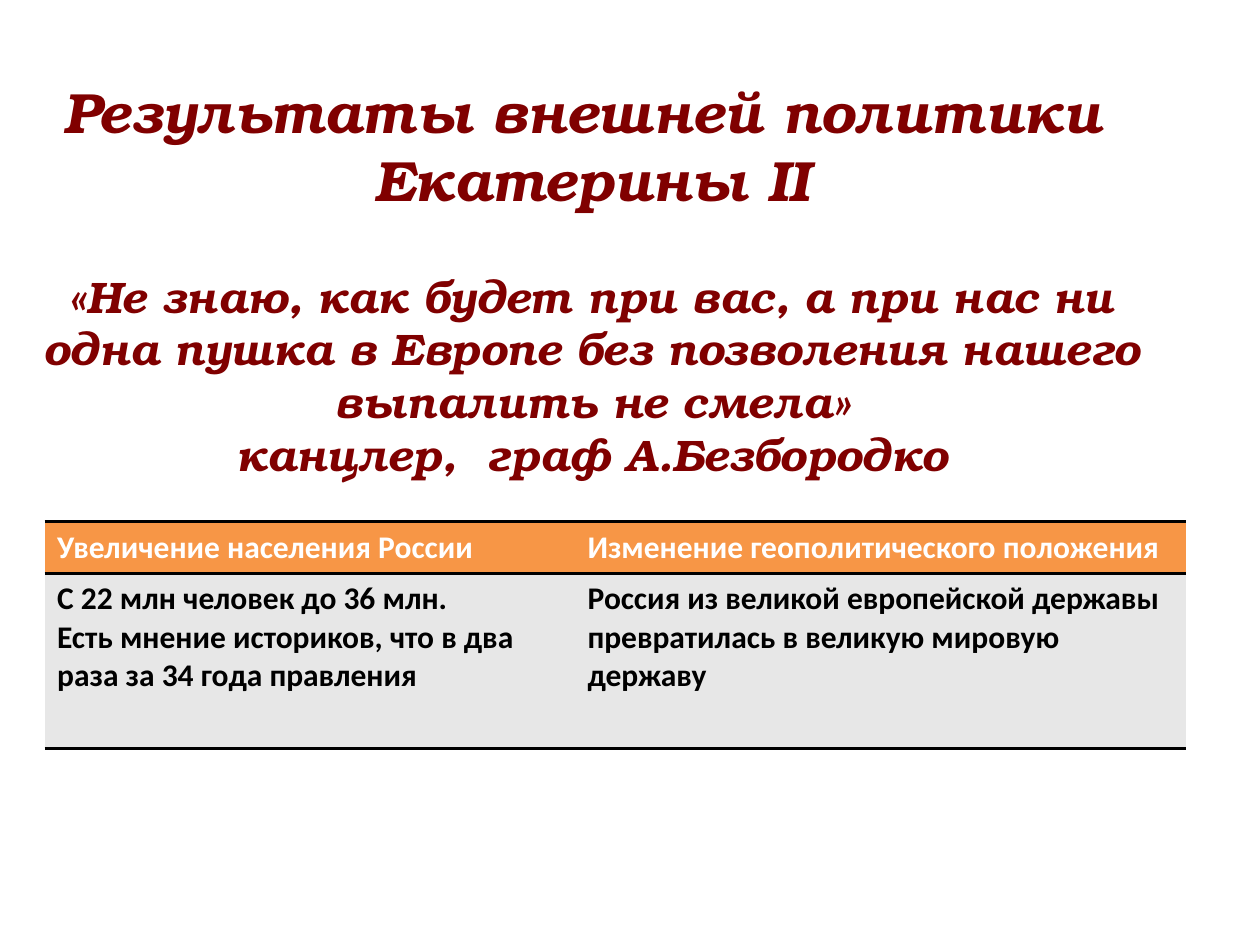
from typing import NamedTuple

from lxml.etree import SubElement
from pptx import Presentation
from pptx.dml.color import RGBColor
from pptx.enum.text import MSO_ANCHOR, MSO_AUTO_SIZE, PP_ALIGN
from pptx.oxml.ns import qn
from pptx.util import Cm, Pt

MAROON = RGBColor(0x80, 0x00, 0x00)
ORANGE = RGBColor(0xF7, 0x96, 0x46)
GREY = RGBColor(0xE7, 0xE7, 0xE7)
WHITE = RGBColor(0xFF, 0xFF, 0xFF)
BLACK = RGBColor(0x00, 0x00, 0x00)
NO_STYLE = "{2D5ABB26-0587-4C30-8999-92F81FD0307C}"
TITLE_FORMAT = dict(name="TeX Gyre Bonum", bold=True, italic=True)
CELL_FORMAT = dict(name="Calibri", bold=True, size=Pt(18))


class Heading(NamedTuple):
    text: str
    size: float
    space_before: float


class Row(NamedTuple):
    texts: tuple[str, ...]
    height: float
    fill: RGBColor
    color: RGBColor
    edges: tuple[str, ...]


HEADINGS = (
    Heading("Результаты внешней политики \vЕкатерины II", 32.4, 0),
    Heading("«Не знаю, как будет при вас, а при нас ни одна пушка в Европе "
            "без позволения нашего выпалить не смела»\v"
            "канцлер,  граф А.Безбородко", 25.2, 32),
)
ROWS = (
    Row(("Увеличение населения России", "Изменение геополитического положения"),
        1.04, ORANGE, WHITE, ("lnT", "lnB")),
    Row(("С 22 млн человек до 36 млн.\n"
         "Есть мнение историков, что в два раза за 34 года правления",
         "Россия из великой европейской державы превратилась в великую мировую державу"),
        3.53, GREY, BLACK, ("lnT", "lnB")),
)
COLUMN_WIDTHS = (10.69, 12.32)


def format_runs(p, **values) -> None:
    for r in p.runs:
        for name, value in values.items():
            if name == "color":
                r.font.color.rgb = value
            else:
                setattr(r.font, name, value)


def fill_title(sp, headings: tuple[Heading, ...]) -> None:
    sp.left, sp.top, sp.width, sp.height = Cm(0.51), Cm(3.73), Cm(22.86), Cm(4.75)
    tf = sp.text_frame
    frame = dict(word_wrap=True, auto_size=MSO_AUTO_SIZE.NONE,
                 vertical_anchor=MSO_ANCHOR.MIDDLE, margin_bottom=Cm(1.1))
    for name, value in frame.items():
        setattr(tf, name, value)
    for i, heading in enumerate(headings):
        p = tf.add_paragraph() if i else tf.paragraphs[0]
        p.text = heading.text
        p.alignment = PP_ALIGN.CENTER
        p.space_before = Pt(heading.space_before)
        format_runs(p, size=Pt(heading.size), color=MAROON, **TITLE_FORMAT)


def add_borders(cell, edges: tuple[str, ...]) -> None:
    """Draw black rules, which must stand before the fill in the cell XML."""
    tc_pr = cell._tc.get_or_add_tcPr()
    for i, edge in enumerate(edges):
        ln = SubElement(tc_pr, qn(f"a:{edge}"), w=str(Pt(2)))
        color = SubElement(SubElement(ln, qn("a:solidFill")), qn("a:srgbClr"))
        color.set("val", str(BLACK))
        tc_pr.insert(i, ln)


def add_results_table(s, rows: tuple[Row, ...]) -> None:
    frame = s.shapes.add_table(len(rows), len(COLUMN_WIDTHS), Cm(0.9), Cm(10.52),
                               Cm(sum(COLUMN_WIDTHS)), Cm(sum(r.height for r in rows)))
    table = frame.table
    table._tbl.tblPr.find(qn("a:tableStyleId")).text = NO_STYLE
    for column, width in zip(table.columns, COLUMN_WIDTHS):
        column.width = Cm(width)
    for table_row, row in zip(table.rows, rows):
        table_row.height = Cm(row.height)
        for cell, text in zip(table_row.cells, row.texts):
            cell.text = text
            cell.fill.solid()
            cell.fill.fore_color.rgb = row.fill
            add_borders(cell, row.edges)
            for p in cell.text_frame.paragraphs:
                format_runs(p, color=row.color, **CELL_FORMAT)


def main() -> None:
    prs = Presentation()
    prs.slide_width, prs.slide_height = Cm(25.4), Cm(19.05)
    s = prs.slides.add_slide(prs.slide_layouts[5])
    fill_title(s.shapes.title, HEADINGS)
    add_results_table(s, ROWS)
    prs.save("out.pptx")


if __name__ == "__main__":
    main()
